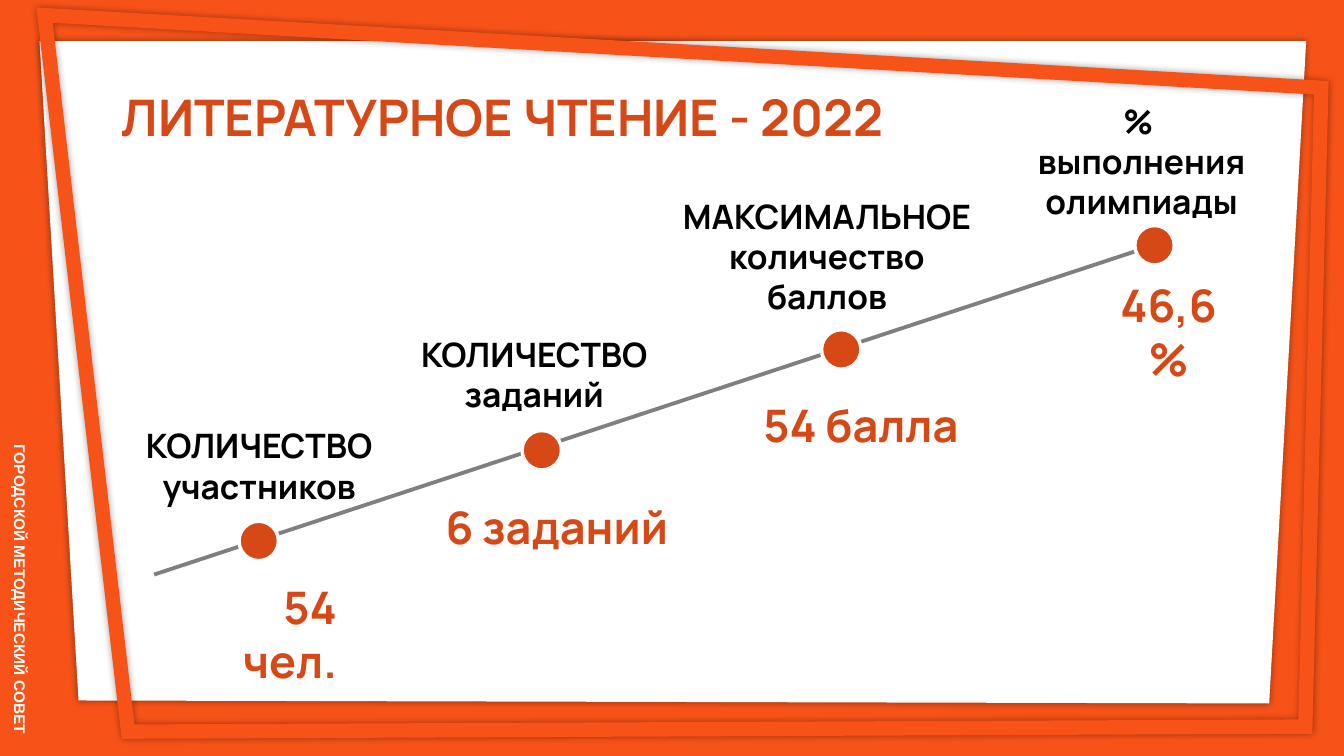
from dataclasses import dataclass

from lxml import etree
from pptx import Presentation
from pptx import util as u
from pptx.dml.color import RGBColor
from pptx.enum import shapes, text
from pptx.oxml import ns

COLUMNS, ROWS = 32, 18
CELL = u.Inches(7.5) / ROWS  # square grid cell


@dataclass(frozen=True)
class Theme:
    orange: str = "F75318"
    accent: str = "D64815"
    white: str = "FFFFFF"
    black: str = "000000"
    grey: str = "7F7F7F"
    font: str = "Manrope"
    sidebar_font: str = "Arial"
    title_size: float = 36
    value_size: float = 32
    label_size: float = 24
    sidebar_size: float = 11


THEME = Theme()
LEFT, CENTER, RIGHT = text.PP_ALIGN.LEFT, text.PP_ALIGN.CENTER, text.PP_ALIGN.RIGHT

# dot centre, label, label box, value, value box, value alignment
MILESTONES = [
    ((6.16, 12.88), "КОЛИЧЕСТВО участников", (3.05, 10.01, 6.24, 2.18),
     "54 чел.", (4.08, 13.68, 4.18, 1.54), RIGHT),
    ((12.9, 10.72), "КОЛИЧЕСТВО заданий", (9.6, 7.82, 6.24, 2.18),
     "6 заданий", (9.91, 11.78, 6.24, 1.54), RIGHT),
    ((20.03, 8.32), "МАКСИМАЛЬНОЕ количество баллов", (15.84, 4.54, 7.7, 3.5),
     "54 балла", (16.82, 9.36, 6.24, 1.54), RIGHT),
    ((27.49, 5.84), "% \nвыполнения\nолимпиады", (23.33, 2.28, 7.7, 3.5),
     "46,6 %", (25.94, 6.5, 3.77, 1.54), CENTER),
]


def grid(*cells):
    return [u.Emu(round(cell * CELL)) for cell in cells]


def color(value):
    return RGBColor.from_string(value)


def add_effects(shape, shadow=False):
    """Append an effect list: empty, or with a soft shadow all around."""
    effects = etree.SubElement(shape._element.spPr, ns.qn("a:effectLst"))
    if shadow:
        outer = etree.SubElement(effects, ns.qn("a:outerShdw"),
                                 blurRad=str(u.Pt(5)), dist="0", dir="0",
                                 algn="ctr", rotWithShape="0")
        shade = etree.SubElement(outer, ns.qn("a:srgbClr"), val=THEME.black)
        etree.SubElement(shade, ns.qn("a:alpha"), val="40000")


def add_text(slide, content, box, *, size, fill, font=THEME.font, align=LEFT,
             inset=0.05, anchor=text.MSO_ANCHOR.TOP, rotation=0):
    shape = slide.shapes.add_textbox(*grid(*box))
    shape.rotation = rotation
    frame = shape.text_frame
    frame.word_wrap = True
    frame.vertical_anchor = anchor
    frame.margin_left = frame.margin_right = u.Inches(0.1)
    frame.margin_top = frame.margin_bottom = u.Inches(inset)
    frame.text = content
    for paragraph in frame.paragraphs:
        paragraph.alignment = align
        for run in paragraph.runs:
            run.font.name = font
            run.font.size = u.Pt(size)
            run.font.bold = True
            run.font.color.rgb = color(fill)


def add_outline(slide, corners, *, fill=None, line=None, width=0):
    start, *others = [grid(*corner) for corner in corners]
    builder = slide.shapes.build_freeform(*start)
    builder.add_line_segments(others, close=True)
    shape = builder.convert_to_shape()
    if fill:
        shape.fill.solid()
        shape.fill.fore_color.rgb = color(fill)
    else:
        shape.fill.background()
    if line:
        shape.line.color.rgb = color(line)
        shape.line.width = u.Pt(width)
        etree.SubElement(shape.line._get_or_add_ln(), ns.qn("a:miter"), lim="800000")
    else:
        shape.line.fill.background()
    add_effects(shape, shadow=True)


def add_trend(slide, start, end):
    line = slide.shapes.add_connector(shapes.MSO_CONNECTOR.STRAIGHT,
                                      *grid(*start, *end))
    line.line.color.rgb = color(THEME.grey)
    line.line.width = u.Pt(2.75)
    add_effects(line)


def add_dot(slide, center, diameter=0.94):
    left, top = (value - diameter / 2 for value in center)
    dot = slide.shapes.add_shape(shapes.MSO_SHAPE.OVAL,
                                 *grid(left, top, diameter, diameter))
    dot.shadow.inherit = False
    dot.fill.solid()
    dot.fill.fore_color.rgb = color(THEME.accent)
    dot.line.color.rgb = color(THEME.white)
    dot.line.width = u.Pt(2.5)


def main():
    presentation = Presentation()
    presentation.slide_width, presentation.slide_height = grid(COLUMNS, ROWS)
    slide = presentation.slides.add_slide(presentation.slide_layouts[6])
    slide.background.fill.solid()
    slide.background.fill.fore_color.rgb = color(THEME.orange)

    # Sidebar, white sheet and tilted frame
    add_text(slide, "ГОРОДСКОЙ МЕТОДИЧЕСКИЙ СОВЕТ", (-3.48, 13.54, 7.92, 0.98),
             size=THEME.sidebar_size, fill=THEME.white, font=THEME.sidebar_font,
             align=CENTER, inset=0.1, anchor=text.MSO_ANCHOR.MIDDLE, rotation=90)
    add_outline(slide, [(0.94, 0.98), (31.1, 0.98), (30.22, 16.75), (1.87, 16.68)],
                fill=THEME.white)
    add_outline(slide, [(1.06, 0.36), (3.05, 17.42), (31.08, 17.3), (31.46, 2.09)],
                line=THEME.orange, width=10.25)

    # Title and rising line
    add_text(slide, "ЛИТЕРАТУРНОЕ ЧТЕНИЕ - 2022", (2.66, 1.94, 19.8, 1.7),
             size=THEME.title_size, fill=THEME.accent)
    add_trend(slide, (3.67, 13.68), (27.5, 5.83))

    # Milestones along the line
    for center, label, label_box, value, value_box, align in MILESTONES:
        add_dot(slide, center)
        add_text(slide, label, label_box, size=THEME.label_size,
                 fill=THEME.black, align=CENTER)
        add_text(slide, value, value_box, size=THEME.value_size,
                 fill=THEME.accent, align=align)

    presentation.save("out.pptx")


if __name__ == "__main__":
    main()
